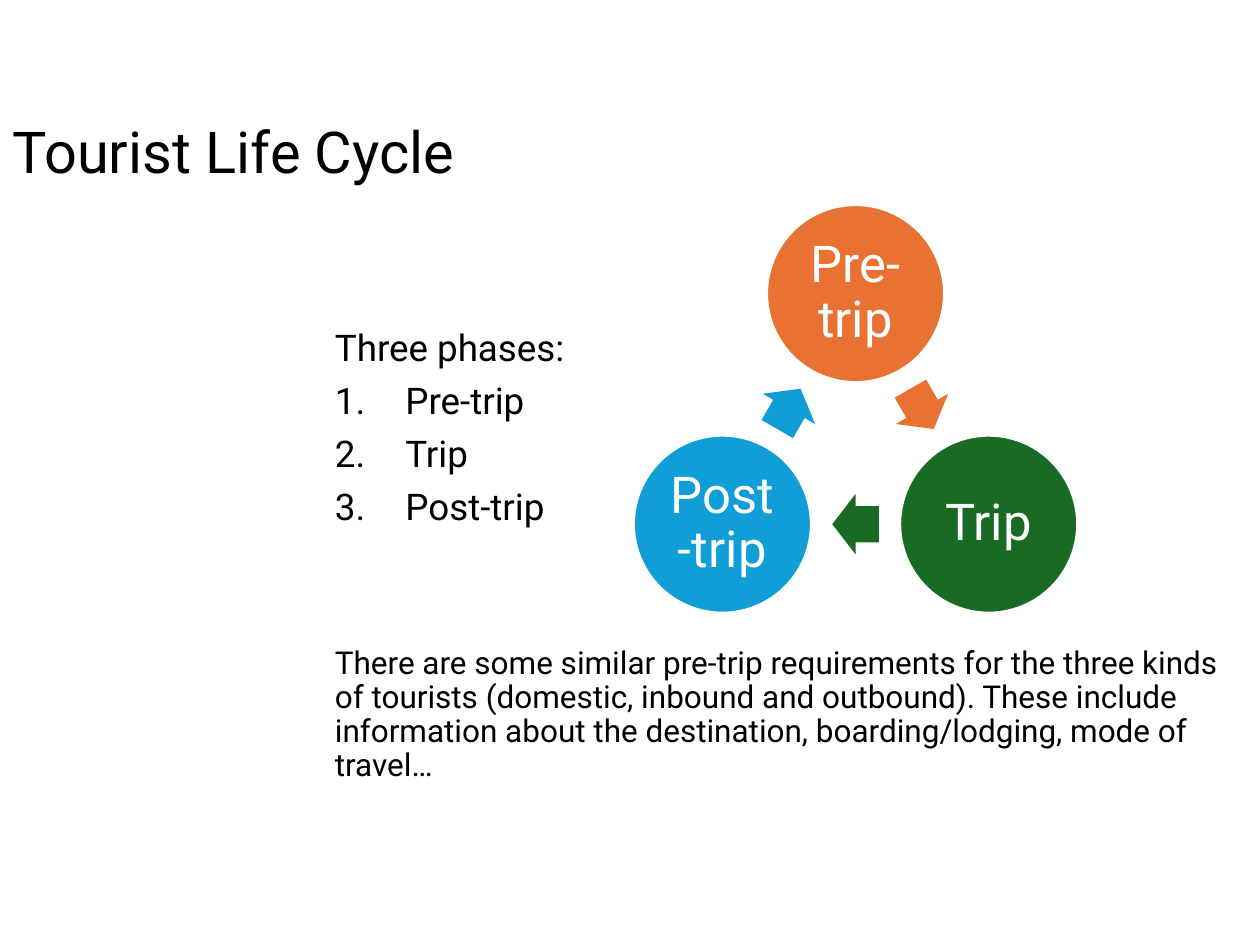
"""Build the Tourist Life Cycle slide: a numbered list beside a three-step cycle."""
from dataclasses import dataclass
from math import cos, radians, sin

from lxml.etree import SubElement
from pptx import Presentation
from pptx.dml.color import RGBColor
from pptx.enum.shapes import MSO_SHAPE
from pptx.enum.text import MSO_ANCHOR, MSO_AUTO_SIZE, PP_ALIGN
from pptx.oxml.ns import qn
from pptx.util import Inches, Pt


@dataclass(frozen=True)
class Theme:
    """Colours, font and type sizes."""
    font: str = "Roboto"
    text: str = "000000"
    white: str = "FFFFFF"
    title: int = 33
    body: int = 21
    note: int = 18
    node: int = 29


@dataclass(frozen=True)
class Phase:
    """One step of the cycle."""
    name: str
    color: str


@dataclass(frozen=True)
class Cycle:
    """Geometry of the cycle, in inches."""
    cx: float = 6.79
    cy: float = 3.55
    radius: float = 1.22
    node: float = 1.41
    arrow_w: float = 0.37
    arrow_h: float = 0.48

    def point(self, radius: float, angle: float) -> tuple[float, float]:
        """Return the point at an angle clockwise from the top."""
        a = radians(angle)
        return self.cx + radius * sin(a), self.cy - radius * cos(a)


@dataclass(frozen=True)
class Line:
    """One paragraph of the body text."""
    text: str
    size: int
    before: float = 7.5
    numbered: bool = False


THEME = Theme()
CYCLE = Cycle()
PHASES = [Phase("Pre-trip", "E97132"), Phase("Trip", "196B24"), Phase("Post-trip", "0F9ED5")]
NOTE = ("There are some similar pre-trip requirements for the three kinds of tourists "
        "(domestic, inbound and outbound). These include information about the "
        "destination, boarding/lodging, mode of travel…")
LINES = [Line("Three phases:", THEME.body),
         *(Line(phase.name, THEME.body, numbered=True) for phase in PHASES),
         Line(NOTE, THEME.note, before=68)]


def add_run(p, text: str, size: int, color: str, align=PP_ALIGN.LEFT) -> None:
    """Add a styled run and set the paragraph's alignment and line spacing."""
    p.alignment = align
    p.line_spacing = 0.9
    r = p.add_run()
    r.text = text
    r.font.name = THEME.font
    r.font.size = Pt(size)
    r.font.color.rgb = RGBColor.from_string(color)


def number(p) -> None:
    """Give a paragraph automatic numbering with a hanging indent."""
    pPr = p._p.get_or_add_pPr()
    pPr.set("marL", str(Inches(0.56)))
    pPr.set("indent", str(Inches(-0.56)))
    SubElement(pPr, qn("a:buAutoNum"), type="arabicPeriod")


def add_title(s, text: str) -> None:
    """Place and fill the title placeholder."""
    sp = s.shapes.title
    sp.left, sp.top, sp.width, sp.height = map(Inches, (0, 0.6, 9, 1.25))
    tf = sp.text_frame
    tf.auto_size = MSO_AUTO_SIZE.NONE
    tf.vertical_anchor = MSO_ANCHOR.MIDDLE
    add_run(tf.paragraphs[0], text, THEME.title, THEME.text)


def add_body(s, lines: list[Line]) -> None:
    """Add the list and the closing note."""
    tf = s.shapes.add_textbox(*map(Inches, (2.56, 2.57, 7.44, 3.77))).text_frame
    tf.word_wrap = True
    for i, line in enumerate(lines):
        p = tf.add_paragraph() if i else tf.paragraphs[0]
        add_run(p, line.text, line.size, THEME.text)
        p.space_before = Pt(line.before)
        if line.numbered:
            number(p)


def add_centered(s, kind, center: tuple[float, float], w: float, h: float, color: str):
    """Add a filled shape around a centre point."""
    x, y = center
    sp = s.shapes.add_shape(kind, Inches(x - w / 2), Inches(y - h / 2), Inches(w), Inches(h))
    sp.shadow.inherit = False
    sp.fill.solid()
    sp.fill.fore_color.rgb = RGBColor.from_string(color)
    return sp


def add_node(s, phase: Phase, angle: float) -> None:
    """Add a labelled circle on the cycle."""
    sp = add_centered(s, MSO_SHAPE.OVAL, CYCLE.point(CYCLE.radius, angle),
                      CYCLE.node, CYCLE.node, phase.color)
    sp.line.color.rgb = RGBColor.from_string(THEME.white)
    sp.line.width = Pt(1.5)
    tf = sp.text_frame
    tf.word_wrap = True
    tf.vertical_anchor = MSO_ANCHOR.MIDDLE
    tf.margin_left = tf.margin_right = tf.margin_top = tf.margin_bottom = Inches(0.04)
    add_run(tf.paragraphs[0], phase.name, THEME.node, THEME.white, PP_ALIGN.CENTER)


def add_arrow(s, phase: Phase, angle: float) -> None:
    """Add the arrow that leads clockwise to the next circle."""
    sp = add_centered(s, MSO_SHAPE.RIGHT_ARROW, CYCLE.point(CYCLE.radius / 2, angle),
                      CYCLE.arrow_w, CYCLE.arrow_h, phase.color)
    sp.line.fill.background()
    sp.adjustments[0], sp.adjustments[1] = 0.6, 0.5
    sp.rotation = angle


def main() -> None:
    """Build and save the slide."""
    prs = Presentation()
    prs.slide_width, prs.slide_height = Inches(10), Inches(7.5)
    s = prs.slides.add_slide(prs.slide_layouts[5])
    add_title(s, "Tourist Life Cycle")
    add_body(s, LINES)
    step = 360 / len(PHASES)
    for i, phase in enumerate(PHASES):
        add_node(s, phase, i * step)
        add_arrow(s, phase, (i + 0.5) * step)
    prs.save("out.pptx")


if __name__ == "__main__":
    main()
